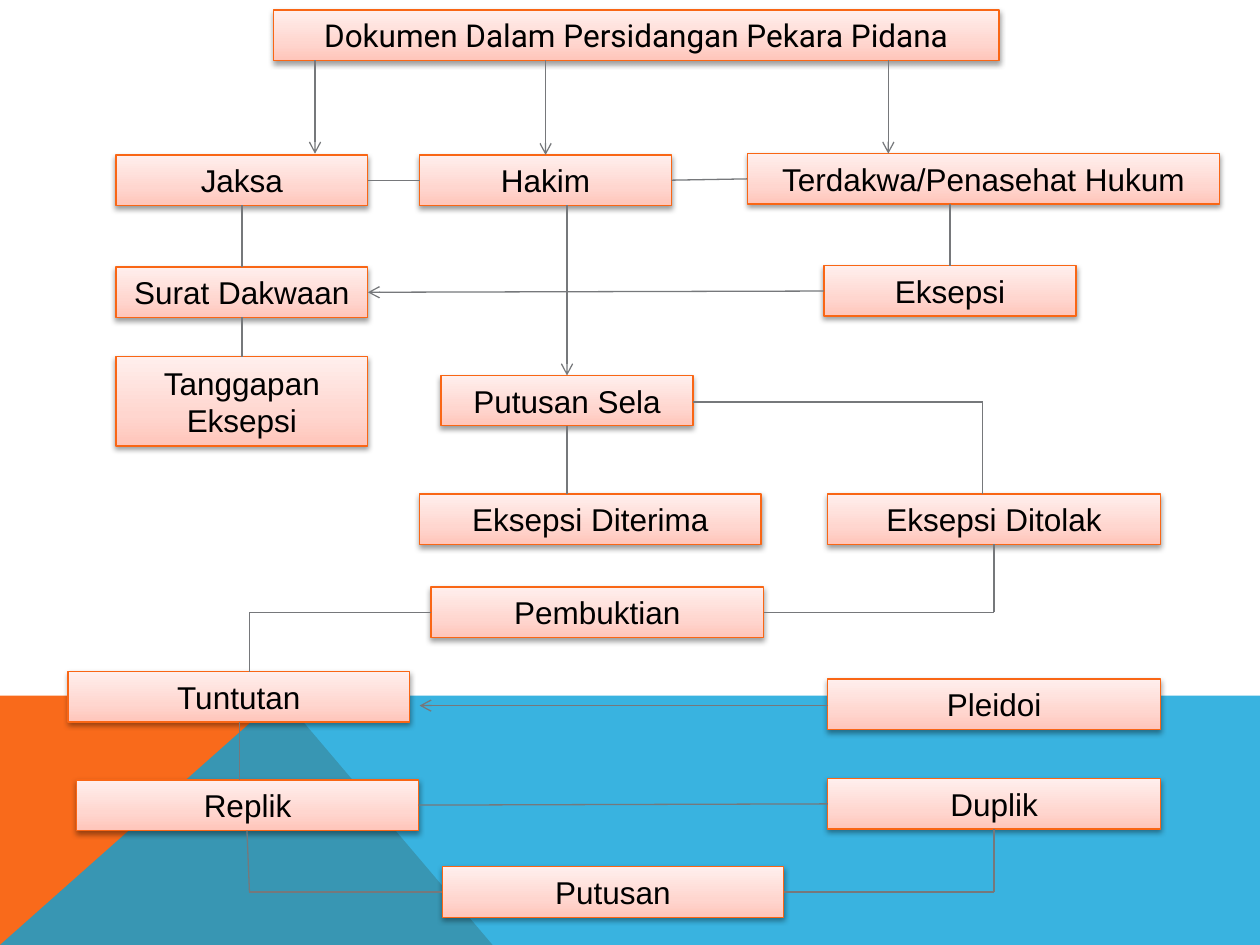
from lxml import etree
from pptx import Presentation
from pptx import util as u
from pptx.dml.color import RGBColor
from pptx.enum import shapes, text
from pptx.oxml import ns, parse_xml

Inches = u.Inches
COLORS = {
    "orange": "F96A1B", "blue": "08A1D9", "edge": "F96615",
    "line": "76787B", "text": "000000", "shadow": "000000",
}
GRADIENT = [(0, "FFC5BA"), (35, "FFD6CF"), (100, "FFEFED")]
TOP, LEFT, BOTTOM, RIGHT = range(4)  # connection sites of a rectangle
HEIGHT = 0.4

# Each node: name, left, top, width, height, relative to its section.
HEARING = [
    ("Jaksa", 0, 0.01, 2, HEIGHT),
    ("Hakim", 2.41, 0.01, 2, HEIGHT),
    ("Terdakwa/Penasehat Hukum", 5.01, 0, 3.75, HEIGHT),
    ("Surat Dakwaan", 0, 0.9, 2, HEIGHT),
    ("Eksepsi", 5.62, 0.89, 2, HEIGHT),
    ("Tanggapan Eksepsi", 0, 1.61, 2, 0.71),
]
RULING = [
    ("Putusan Sela", 0.17, 0, 2, HEIGHT),
    ("Eksepsi Diterima", 0, 0.94, 2.71, HEIGHT),
    ("Eksepsi Ditolak", 3.24, 0.94, 2.64, HEIGHT),
    ("Pembuktian", 0.09, 1.68, 2.64, HEIGHT),
]
CLOSING = [
    ("Tuntutan", 0, 0, 2.71, HEIGHT),
    ("Pleidoi", 6.03, 0.06, 2.64, HEIGHT),
    ("Replik", 0.07, 0.86, 2.71, HEIGHT),
    ("Duplik", 6.03, 0.85, 2.64, HEIGHT),
    ("Putusan", 2.97, 1.55, 2.71, HEIGHT),
]
# Straight links glued to two nodes: node, site, node, site, arrow.
LINKS = [
    ("Jaksa", RIGHT, "Hakim", LEFT, False),
    ("Hakim", RIGHT, "Terdakwa/Penasehat Hukum", LEFT, False),
    ("Jaksa", BOTTOM, "Surat Dakwaan", TOP, False),
    ("Eksepsi", LEFT, "Surat Dakwaan", RIGHT, True),
    ("Surat Dakwaan", BOTTOM, "Tanggapan Eksepsi", TOP, False),
    ("Duplik", LEFT, "Replik", RIGHT, False),
]
# Links that leave or meet a node away from the middle of a side.
ROUTES = [
    ([(7.54, 1.62), (7.54, 2.11)], False),
    ([(4.5, 3.38), (4.5, 3.92)], False),
    ([(5.5, 3.19), (7.8, 3.19), (7.8, 3.92)], False),
    ([(7.89, 4.32), (7.89, 4.86), (6.06, 4.86)], False),
    ([(3.42, 4.86), (1.98, 4.86), (1.98, 5.33)], False),
    ([(6.57, 5.6), (3.33, 5.6)], True),
    ([(1.9, 5.73), (1.9, 6.19)], False),
    ([(7.89, 6.58), (7.89, 7.08), (6.22, 7.08)], False),
    ([(1.96, 6.59), (1.98, 7.08), (3.51, 7.08)], False),
    ([(7.05, 0.48), (7.05, 1.22)], True),
    ([(4.33, 0.48), (4.33, 1.23)], True),
    ([(2.5, 0.48), (2.5, 1.22)], True),
    ([(4.5, 1.63), (4.5, 2.98)], True),
]


def rgb(name):
    return RGBColor.from_string(COLORS[name])


def write_text(shape, words, font="Arial", size=18, color="text"):
    frame = shape.text_frame
    frame.word_wrap = True
    frame.auto_size = text.MSO_AUTO_SIZE.NONE
    frame.vertical_anchor = text.MSO_ANCHOR.MIDDLE
    frame.margin_left = frame.margin_right = Inches(0.1)
    frame.margin_top = frame.margin_bottom = Inches(0.05)
    para = frame.paragraphs[0]
    para.alignment = text.PP_ALIGN.CENTER
    span = para.add_run()
    span.text = words
    span.font.name = font
    span.font.size = u.Pt(size)
    span.font.color.rgb = rgb(color)


def style_node(shape):
    """Give a box its three-stop gradient, thin edge and soft shadow."""
    shape.fill.gradient()
    shape.fill.gradient_angle = 90
    stops = shape._element.spPr.find(".//" + ns.qn("a:gsLst"))
    for stop in list(stops):
        stops.remove(stop)
    for position, color in GRADIENT:
        stop = etree.SubElement(stops, ns.qn("a:gs"), pos=str(position * 1000))
        etree.SubElement(stop, ns.qn("a:srgbClr"), val=color)
    shape.line.color.rgb = rgb("edge")
    shape.line.width = u.Pt(0.75)
    shape._element.spPr.append(parse_xml(
        f'<a:effectLst {ns.nsdecls("a")}><a:outerShdw blurRad="{u.Pt(3.1)}" '
        f'dist="{u.Pt(1.6)}" dir="5400000" rotWithShape="0">'
        f'<a:srgbClr val="{COLORS["shadow"]}"><a:alpha val="38000"/></a:srgbClr>'
        '</a:outerShdw></a:effectLst>'))


def draw_area(page, points, color, opacity=100):
    points = [(Inches(x), Inches(y)) for x, y in points]
    builder = page.shapes.build_freeform(*points[0])
    builder.add_line_segments(points[1:], close=True)
    area = builder.convert_to_shape()
    area.shadow.inherit = False
    area.fill.solid()
    area.fill.fore_color.rgb = rgb(color)
    area.line.fill.background()
    if opacity < 100:
        fill = area._element.spPr.find(".//" + ns.qn("a:srgbClr"))
        etree.SubElement(fill, ns.qn("a:alpha"), val=str(opacity * 1000))


def draw_backdrop(page, box):
    left, top, width, height = box
    right, bottom, peak = left + width, top + height, left + 2.23
    draw_area(page, [(left, bottom), (left, top), (peak, top),
                     (left + 3.91, bottom)], "orange")
    draw_area(page, [(left, bottom), (peak, top), (right, top),
                     (right, bottom)], "blue", opacity=80)


def draw_heading(page, box):
    title = page.shapes.title
    title.left, title.top, title.width, title.height = map(Inches, box)
    style_node(title)
    write_text(title, "Dokumen Dalam Persidangan Pekara Pidana", font="Roboto")


def draw_section(page, box, nodes):
    """Place the nodes of one stage and return them by name."""
    left, top = box[:2]
    placed = {}
    for name, x, y, width, height in nodes:
        node = page.shapes.add_shape(
            shapes.MSO_SHAPE.RECTANGLE, Inches(left + x), Inches(top + y),
            Inches(width), Inches(height))
        style_node(node)
        write_text(node, name)
        placed[name] = node
    return placed


def draw_line(page, start=(0, 0), end=(0, 0), arrow=False):
    line = page.shapes.add_connector(
        shapes.MSO_CONNECTOR.STRAIGHT, *map(Inches, (*start, *end)))
    line.line.color.rgb = rgb("line")
    line.line.width = u.Pt(0.75)
    if arrow:
        etree.SubElement(line.line._get_or_add_ln(), ns.qn("a:tailEnd"), type="arrow")
    etree.SubElement(line._element.spPr, ns.qn("a:effectLst"))
    return line


def draw_links(page, nodes):
    for source, source_site, target, target_site, arrow in LINKS:
        line = draw_line(page, arrow=arrow)
        line.begin_connect(nodes[source], source_site)
        line.end_connect(nodes[target], target_site)
    for points, arrow in ROUTES:
        for start, end in zip(points, points[1:]):
            draw_line(page, start, end, arrow)


def main():
    deck = Presentation()
    deck.slide_width, deck.slide_height = Inches(10), Inches(7.5)
    page = deck.slides.add_slide(deck.slide_layouts[5])
    draw_backdrop(page, (0, 5.52, 10, 1.98))
    draw_heading(page, (2.17, 0.08, 5.76, HEIGHT))
    nodes = {
        **draw_section(page, (0.92, 1.22, 8.76, 2.32), HEARING),
        **draw_section(page, (3.33, 2.98, 5.88, 2.08), RULING),
        **draw_section(page, (0.54, 5.33, 8.67, 1.95), CLOSING),
    }
    draw_links(page, nodes)
    deck.save("out.pptx")


if __name__ == "__main__":
    main()
